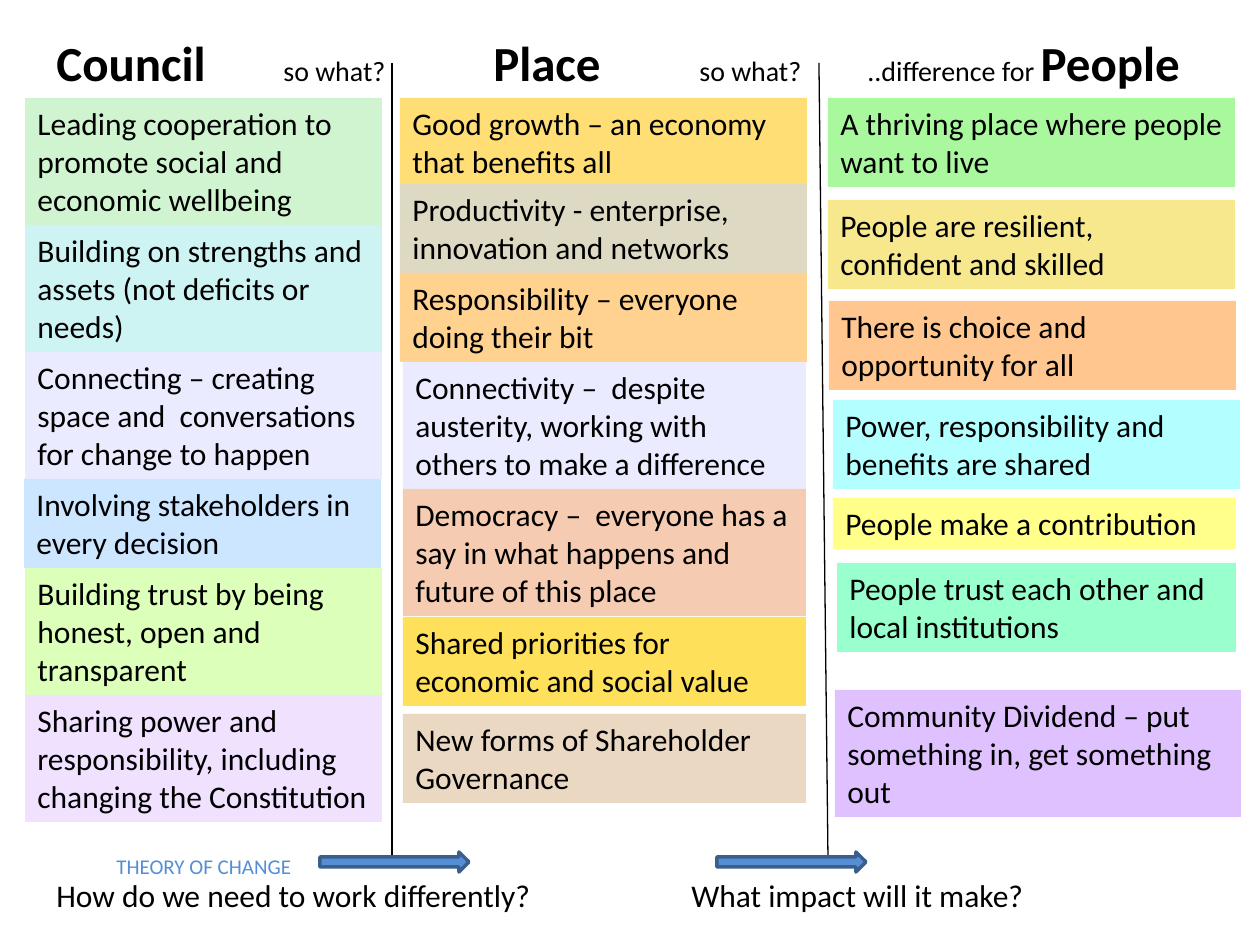
from lxml import etree
from pptx import Presentation
from pptx import util as u
from pptx.dml.color import RGBColor
from pptx.enum import shapes, text
from pptx.oxml.ns import qn

PX = 914400 // 126
TOP, PAD, LINE = 98, 13, 38  # column top, box padding, text line height
HEAD, NOTE, BODY, TAG = 28, 16, 18, 12

HUES = {
    "black": "000000", "blue": "558ED5", "navy": "3A5F8C",
    "mint": "D0F4D0", "aqua": "CDF3F2", "lilac": "EBEBFF", "sky": "CDE6FF",
    "lime": "DCFFB9", "mauve": "F0E1FF", "gold": "FFDE75", "stone": "DDD9C3",
    "peach": "FFD28F", "rose": "F5CBB1", "sun": "FFE05B", "sand": "EBD8C3",
    "green": "A9F89E", "straw": "F7E88D", "orange": "FFC78F", "cyan": "B3FFFF",
    "lemon": "FFFF89", "jade": "99FFCC", "violet": "E0C1FF",
}

# Each box: left, gap above, width, text lines, fill, wording
COUNCIL = [
    (25, 0, 357, 3, "mint", "Leading cooperation to promote social and economic wellbeing"),
    (25, 0, 357, 3, "aqua", "Building on strengths and assets (not deficits or needs)"),
    (25, 0, 357, 3, "lilac", "Connecting – creating space and  conversations for change to happen"),
    (24, 0, 357, 2, "sky", "Involving stakeholders in every decision"),
    (25, 0, 357, 3, "lime", "Building trust by being honest, open and transparent"),
    (25, 0, 357, 3, "mauve", "Sharing power and responsibility, including changing the Constitution"),
]
PLACE = [
    (400, 0, 407, 2, "gold", "Good growth – an economy that benefits all"),
    (400, -3, 407, 2, "stone", "Productivity - enterprise, innovation and networks"),
    (400, 0, 407, 2, "peach", "Responsibility – everyone doing their bit"),
    (403, 0, 403, 3, "lilac", "Connectivity –  despite austerity, working with others to make a difference"),
    (403, 0, 403, 3, "rose", "Democracy –  everyone has a say in what happens and  future of this place"),
    (403, 1, 403, 2, "sun", "Shared priorities for economic and social value"),
    (403, 8, 403, 2, "sand", "New forms of Shareholder Governance"),
]
PEOPLE = [
    (828, 0, 407, 2, "green", "A thriving place where people want to live"),
    (828, 13, 407, 2, "straw", "People are resilient, confident and skilled"),
    (829, 12, 407, 2, "orange", "There is choice and opportunity for all"),
    (833, 10, 407, 2, "cyan", "Power, responsibility and benefits are shared"),
    (833, 9, 403, 1, "lemon", "People make a contribution"),
    (837, 14, 399, 2, "jade", "People trust each other and local institutions"),
    (835, 38, 406, 3, "violet", "Community Dividend – put something in, get something out"),
]


def px(*vals):
    return [u.Emu(v * PX) for v in vals]


def hue(name):
    return RGBColor.from_string(HUES[name])


def write(shape, runs, color="black", tab=None):
    """Fill a shape with one paragraph of (wording, size) runs."""
    frame = shape.text_frame
    frame.word_wrap = True
    frame.vertical_anchor = text.MSO_ANCHOR.TOP
    para = frame.paragraphs[0]
    para.alignment = text.PP_ALIGN.LEFT
    if tab:
        props = para._p.get_or_add_pPr()
        stops = etree.SubElement(props, qn("a:tabLst"))
        etree.SubElement(stops, qn("a:tab"), pos=str(tab * PX), algn="l")
    para.font.name = "Calibri"
    para.font.color.rgb = hue(color)
    if len(runs) == 1:
        para.font.size = u.Pt(runs[0][1])
    for words, size in runs:
        run = para.add_run()
        run.text = words
        if len(runs) > 1:
            run.font.size = u.Pt(size)
            run.font.bold = size == HEAD


def label(slide, x, y, w, h, runs, color="black", tab=None):
    write(slide.shapes.add_textbox(*px(x, y, w, h)), runs, color, tab)


def solid(slide, kind, x, y, w, h, fill):
    shape = slide.shapes.add_shape(kind, *px(x, y, w, h))
    shape.shadow.inherit = False
    shape.fill.solid()
    shape.fill.fore_color.rgb = hue(fill)
    return shape


def stack(slide, boxes):
    y = TOP
    for x, gap, w, lines, fill, words in boxes:
        y += gap
        h = PAD + LINE * lines
        box = solid(slide, shapes.MSO_SHAPE.RECTANGLE, x, y, w, h, fill)
        box.line.fill.background()
        write(box, [(words, BODY)])
        y += h


def rule(slide, x1, x2):
    line = slide.shapes.add_connector(
        shapes.MSO_CONNECTOR.STRAIGHT, *px(x1, 63, x2, 857))
    line.line.color.rgb = hue("black")
    line.line.width = u.Pt(0.75)
    etree.SubElement(line._element.spPr, qn("a:effectLst"))


def arrow(slide, x):
    shape = solid(slide, shapes.MSO_SHAPE.RIGHT_ARROW, x, 852, 149, 20, "blue")
    shape.line.color.rgb = hue("navy")
    shape.line.width = u.Pt(2)


def main():
    deck = Presentation()
    deck.slide_width, deck.slide_height = px(1260, 945)
    slide = deck.slides.add_slide(deck.slide_layouts[6])

    # Headings
    label(slide, 44, 26, 397, 72, [("Council\t", HEAD), ("so what?", NOTE)], tab=227)
    label(slide, 481, 26, 343, 72, [("Place\t", HEAD), ("so what?", NOTE)], tab=206)
    label(slide, 855, 26, 357, 72, [("..difference for ", NOTE), ("People", HEAD)])

    # Column dividers
    rule(slide, 392, 392)
    rule(slide, 819, 828)

    # Questions and arrows at the foot
    label(slide, 44, 870, 507, 50, [("How do we need to work differently?", BODY)])
    label(slide, 679, 870, 507, 50, [("What impact will it make?", BODY)])
    for x in (320, 717):
        arrow(slide, x)
    label(slide, 104, 847, 216, 38, [("THEORY OF CHANGE", TAG)], "blue")

    # Columns of boxes
    for boxes in (COUNCIL, PLACE, PEOPLE):
        stack(slide, boxes)

    deck.save("out.pptx")


if __name__ == "__main__":
    main()
